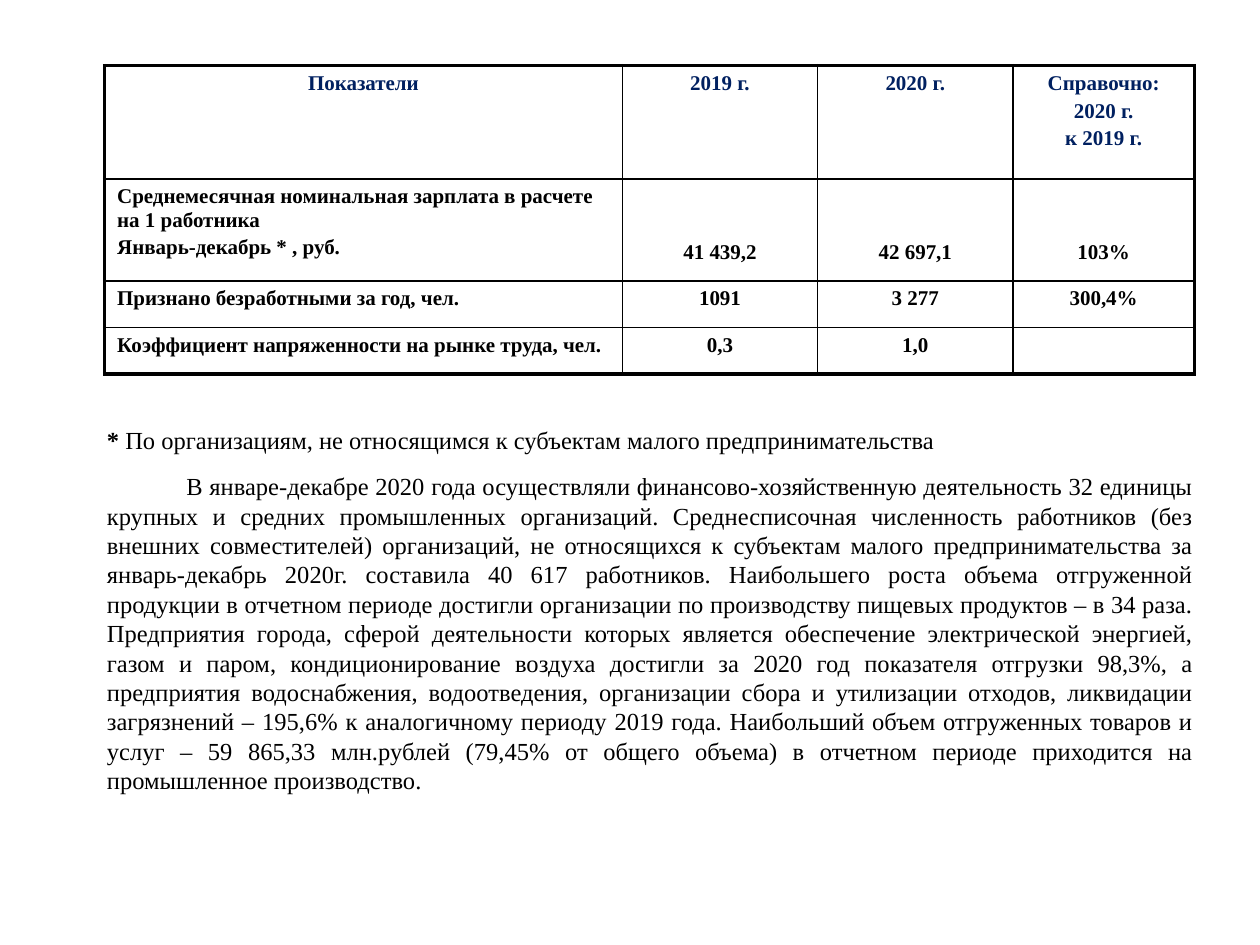
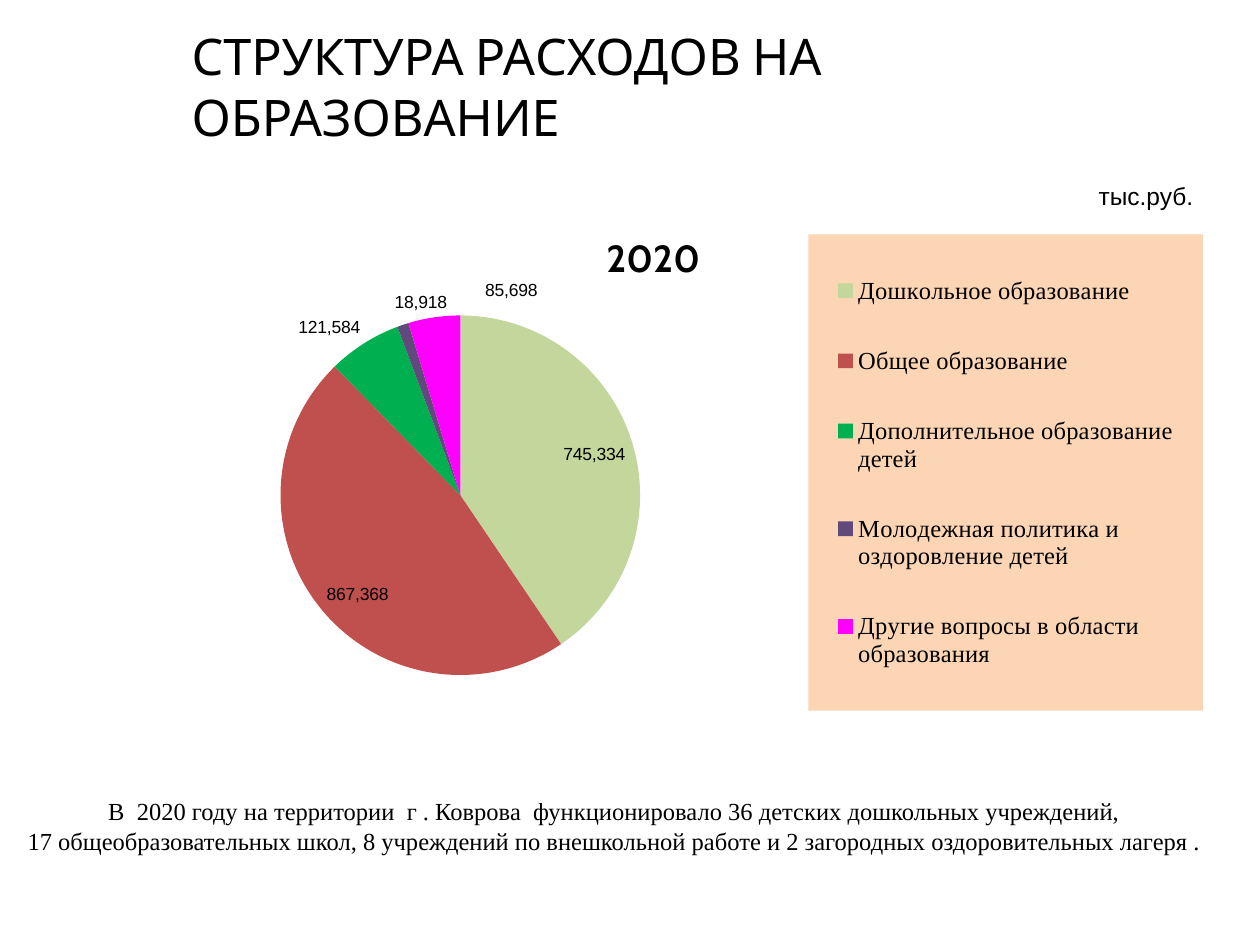
from lxml import etree
from pptx import Presentation
from pptx import util as u
from pptx.chart.data import CategoryChartData
from pptx.dml.color import RGBColor
from pptx.enum import chart as ch, text as t
from pptx.oxml import parse_xml
from pptx.oxml.ns import nsdecls, qn

BLACK = RGBColor(0, 0, 0)
NAVY = RGBColor(0x00, 0x20, 0x60)
PEACH = RGBColor(0xFC, 0xD5, 0xB5)
SLICES = [RGBColor.from_string(c) for c in
          ("C3D69B", "C0504D", "00B050", "604A7B", "FF00FF")]

SERIF = "Times New Roman"
BODY = {"name": SERIF, "size": u.Pt(14), "bold": False}
CELL = {"name": SERIF, "size": u.Pt(12), "bold": True}
HEAD = {"name": "Cabin", "size": u.Pt(28.8), "bold": False}
UNIT = {"name": "Arial", "size": u.Pt(14), "bold": False}
LABEL = {"name": "Arial", "size": u.Pt(10), "bold": False}
CENTER, LEFT, JUST = t.PP_ALIGN.CENTER, t.PP_ALIGN.LEFT, t.PP_ALIGN.JUSTIFY

ROWS = [
    ("Показатели", "2019 г.", "2020 г.", "Справочно:\n2020 г.\nк 2019 г."),
    ("Среднемесячная номинальная зарплата в расчете на 1 работника\n"
     "Январь-декабрь * , руб.", "41 439,2", "42 697,1", "103%"),
    ("Признано безработными за год, чел.", "1091", "3 277", "300,4%"),
    ("Коэффициент напряженности на рынке труда, чел.", "0,3", "1,0", ""),
]
WIDTHS = (4.11, 1.55, 1.55, 1.44)
HEIGHTS = (0.9, 0.81, 0.37, 0.37)

NOTE = "По организациям, не относящимся к субъектам малого предпринимательства"
REPORT = [
    "В январе-декабре 2020 года осуществляли финансово-хозяйственную "
    "деятельность 32 единицы крупных и средних промышленных организаций.",
    "Среднесписочная численность работников (без внешних совместителей) "
    "организаций, не относящихся к субъектам малого предпринимательства за "
    "январь-декабрь 2020г. составила 40 617 работников.",
    "Наибольшего роста объема отгруженной продукции в отчетном периоде "
    "достигли организации по производству пищевых продуктов – в 34 раза.",
    "Предприятия города, сферой деятельности которых является обеспечение "
    "электрической энергией, газом и паром, кондиционирование воздуха "
    "достигли за 2020 год показателя отгрузки 98,3%, а предприятия "
    "водоснабжения, водоотведения, организации сбора и утилизации отходов, "
    "ликвидации загрязнений – 195,6% к аналогичному периоду 2019 года.",
    "Наибольший объем отгруженных товаров и услуг – 59 865,33 млн.рублей "
    "(79,45% от общего объема) в отчетном периоде приходится на "
    "промышленное производство.",
]
SCHOOLS = (
    "В  2020 году на территории  г . Коврова  функционировало 36 детских "
    "дошкольных учреждений,\v17 общеобразовательных школ, 8 учреждений по "
    "внешкольной работе и 2 загородных оздоровительных лагеря .")

# Name, value, label place, label shift as a share of the chart
INSIDE = ch.XL_LABEL_POSITION.INSIDE_END
OUTSIDE = ch.XL_LABEL_POSITION.OUTSIDE_END
COSTS = [
    ("Дошкольное образование", 745334, INSIDE, None),
    ("Общее образование", 867368, INSIDE, None),
    ("Дополнительное образование детей", 121584, OUTSIDE, None),
    ("Молодежная политика и оздоровление детей", 18918, OUTSIDE, (0.04, -0.01)),
    ("Другие вопросы в области образования", 85698, OUTSIDE, (0.09, -0.02)),
]


def style(font, form, color=BLACK):
    for key, val in form.items():
        setattr(font, key, val)
    font.color.rgb = color


def inch(box):
    return [u.Inches(v) for v in box]


def write(frame, words, form, align=LEFT, color=BLACK, gap=0):
    """Fill a text frame, one paragraph for each line of words."""
    for i, line in enumerate(words.split("\n")):
        par = frame.paragraphs[0] if i == 0 else frame.add_paragraph()
        par.text = line
        par.alignment = align
        if i and gap:
            par.space_before = u.Pt(gap)
        style(par.font, form, color)


def add_text(slide, box, words, form, align=LEFT, indent=0, wrap=True,
             anchor=t.MSO_ANCHOR.TOP):
    frame = slide.shapes.add_textbox(*inch(box)).text_frame
    frame.word_wrap = wrap
    frame.vertical_anchor = anchor
    write(frame, words, form, align)
    if indent:
        props = frame.paragraphs[0]._p.get_or_add_pPr()
        props.set("marL", "0")
        props.set("indent", str(u.Inches(indent)))
    return frame


def edge(cell, outer):
    """Draw the borders; sides in outer are heavy."""
    props = cell._tc.get_or_add_tcPr()
    for i, side in enumerate("LRTB"):
        width = u.Pt(2.25 if side in outer else 1)
        props.insert(i, parse_xml(
            f'<a:ln{side} {nsdecls("a")} w="{width}"><a:solidFill>'
            f'<a:srgbClr val="{BLACK}"/></a:solidFill></a:ln{side}>'))


def add_grid(slide, left, top):
    box = inch((left, top, sum(WIDTHS), sum(HEIGHTS)))
    grid = slide.shapes.add_table(len(ROWS), len(WIDTHS), *box).table
    for col, width in zip(grid.columns, WIDTHS):
        col.width = u.Inches(width)
    for row, height in zip(grid.rows, HEIGHTS):
        row.height = u.Inches(height)
    for r, row in enumerate(ROWS):
        for c, words in enumerate(row):
            cell = grid.cell(r, c)
            cell.fill.background()
            write(cell.text_frame, words, CELL,
                  CENTER if r == 0 or c else LEFT,
                  BLACK if r else NAVY, gap=2.4)
            # Pay figures sit level with the last line of their label
            if r == 1 and c:
                cell.vertical_anchor = t.MSO_ANCHOR.BOTTOM
                cell.margin_bottom = u.Inches(0.13)
            ends = {"L": c == 0, "R": c == len(WIDTHS) - 1,
                    "T": r == 0, "B": r == len(ROWS) - 1}
            edge(cell, [side for side, on in ends.items() if on])


def layout(x, y, w=None, h=None, inner=False):
    """Chart layout element; without a size it is a shift."""
    vals = [("x", x), ("y", y)]
    modes = []
    if inner:
        modes.append(("layoutTarget", "inner"))
    if w:
        modes += [("xMode", "edge"), ("yMode", "edge")]
        vals += [("w", w), ("h", h)]
    node = etree.Element(qn("c:layout"))
    inside = etree.SubElement(node, qn("c:manualLayout"))
    for tag, val in modes + vals:
        etree.SubElement(inside, qn("c:" + tag)).set("val", str(val))
    return node


def place(host, node, after):
    """Put a layout in host, straight after the named child."""
    for old in host.findall(qn("c:layout")):
        host.remove(old)
    spot = host.find(qn("c:" + after)) if after else None
    if spot is None:
        host.insert(0, node)
    else:
        spot.addnext(node)


def add_pie(slide, box):
    data = CategoryChartData(number_format="#,##0")
    data.categories = [cost[0] for cost in COSTS]
    data.add_series("2020", [cost[1] for cost in COSTS])
    pie = slide.shapes.add_chart(ch.XL_CHART_TYPE.PIE, *inch(box), data).chart
    style(pie.font, {"name": "Cabin", "size": u.Pt(18)})

    # Heading
    pie.has_title = True
    write(pie.chart_title.text_frame, "2020",
          {"name": "Cabin", "size": u.Pt(21.6), "bold": True}, CENTER)
    place(pie.chart_title._element, layout(0.47, 0.02, 0.08, 0.1), "tx")

    # Legend
    pie.has_legend = True
    key = pie.legend
    key.position = ch.XL_LEGEND_POSITION.RIGHT
    key.include_in_layout = False
    style(key.font, BODY)
    place(key._element, layout(0.65, 0.04, 0.34, 0.94), "legendPos")
    key._element.find(qn("c:txPr")).addprevious(parse_xml(
        f'<c:spPr {nsdecls("c", "a")}><a:solidFill>'
        f'<a:srgbClr val="{PEACH}"/></a:solidFill></c:spPr>'))

    # Slices and their labels
    plot = pie.plots[0]
    plot.vary_by_categories = True
    place(plot._element.getparent(),
          layout(0.06, 0.2, 0.58, 0.71, inner=True), None)
    series = plot.series[0]
    for i, (color, cost) in enumerate(zip(SLICES, COSTS)):
        point = series.points[i]
        point.format.fill.solid()
        point.format.fill.fore_color.rgb = color
        style(point.data_label.font, LABEL)
        point.data_label.position = cost[2]
        if cost[3]:
            mark = series._element.findall(".//" + qn("c:dLbl"))[i]
            place(mark, layout(*cost[3]), "idx")
    for lines in series._element.iter(qn("c:showLeaderLines")):
        lines.set("val", "0")


def labor(deck):
    """Pay and employment table with its report."""
    slide = deck.slides.add_slide(deck.slide_layouts[6])
    add_grid(slide, 0.83, 0.52)
    note = add_text(slide, (0.75, 3.26, 8.82, 0.4), "", BODY,
                    anchor=t.MSO_ANCHOR.BOTTOM)
    for words, bold in (("* ", True), (NOTE, False)):
        run = note.paragraphs[0].add_run()
        run.text = words
        style(run.font, {**BODY, "bold": bold})
    add_text(slide, (0.75, 3.69, 8.82, 3.16), " ".join(REPORT), BODY, JUST, 0.63)


def school(deck):
    """Education spending pie."""
    slide = deck.slides.add_slide(deck.slide_layouts[5])
    title = slide.shapes.title
    box = inch((1.42, 0.21, 7.75, 0.94))
    for key, val in zip(("left", "top", "width", "height"), box):
        setattr(title, key, val)
    frame = title.text_frame
    frame.auto_size = t.MSO_AUTO_SIZE.NONE
    frame.word_wrap = True
    frame.vertical_anchor = t.MSO_ANCHOR.MIDDLE
    write(frame, "СТРУКТУРА РАСХОДОВ НА ОБРАЗОВАНИЕ", HEAD)
    add_pie(slide, (0.43, 1.7, 9.21, 4.02))
    add_text(slide, (0.12, 6.27, 9.61, 0.81), SCHOOLS, BODY, indent=0.64)
    add_text(slide, (8.62, 1.39, 0.98, 0.34), "тыс.руб.", UNIT, wrap=False)


def main():
    deck = Presentation()
    deck.slide_width, deck.slide_height = inch((10, 7.5))
    labor(deck)
    school(deck)
    deck.save("out.pptx")


if __name__ == "__main__":
    main()
